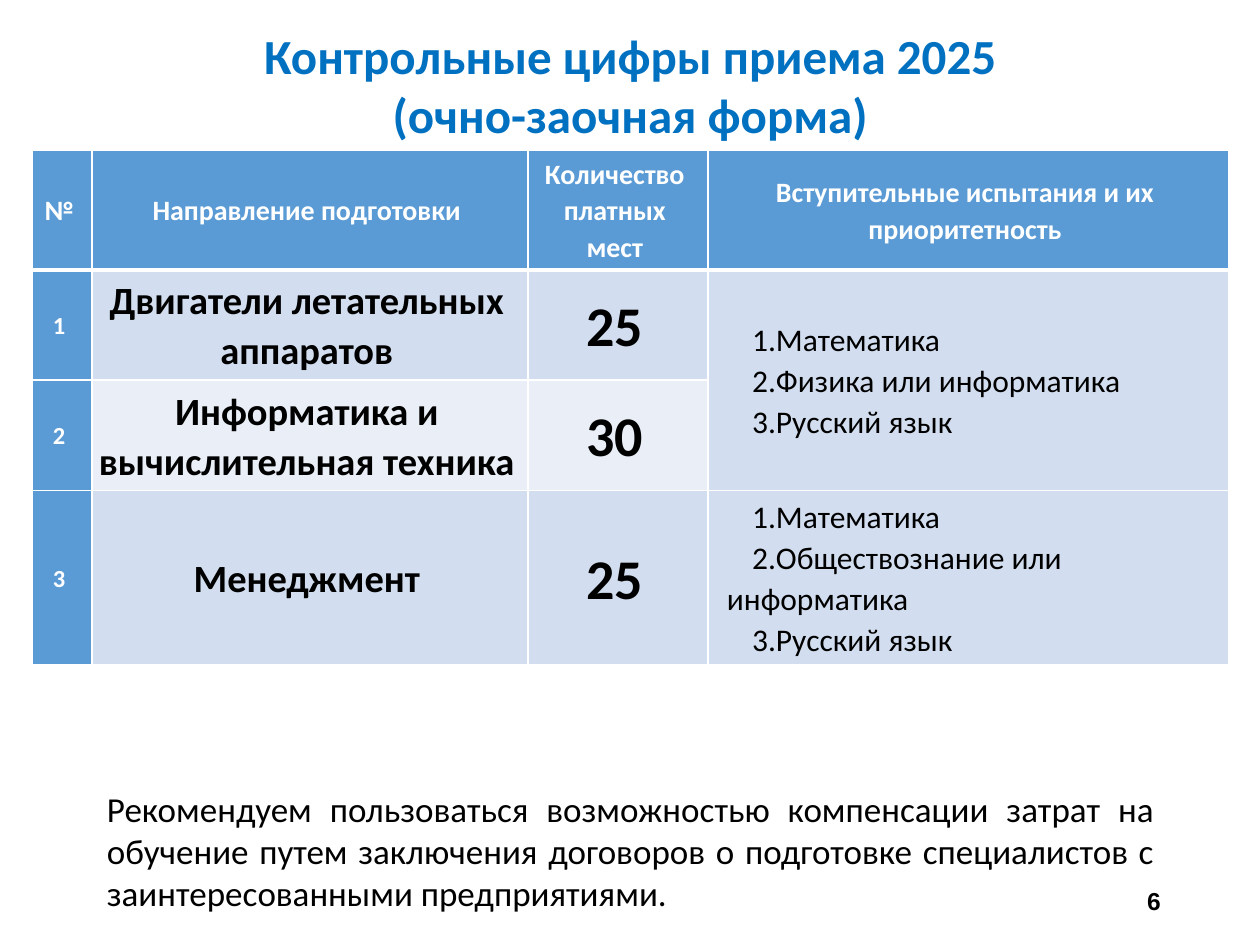
import pptx
import pptx.util
import pptx.dml.color
import pptx.enum.text
import pptx.oxml

Inches, Pt = pptx.util.Inches, pptx.util.Pt
RGBColor = pptx.dml.color.RGBColor
ALIGN = pptx.enum.text.PP_ALIGN
MIDDLE = pptx.enum.text.MSO_ANCHOR.MIDDLE

TITLE_BLUE = RGBColor(0x00, 0x70, 0xC0)
HEADER_BLUE = RGBColor(0x5B, 0x9B, 0xD5)
BAND_DARK = RGBColor(0xD2, 0xDE, 0xEF)
BAND_LIGHT = RGBColor(0xEA, 0xEF, 0xF7)
WHITE = RGBColor(0xFF, 0xFF, 0xFF)
BLACK = RGBColor(0x00, 0x00, 0x00)
NS = 'xmlns:a="http://schemas.openxmlformats.org/drawingml/2006/main"'


def write(frame, lines, size, color, bold, align, font="Calibri", spacing=None, numbered=False):
    frame.word_wrap = True
    frame.text = "\n".join(lines)
    for paragraph in frame.paragraphs:
        paragraph.alignment = align
        if spacing:
            paragraph.line_spacing = spacing
        if numbered:
            properties = paragraph._p.get_or_add_pPr()
            properties.set("marL", str(Inches(0.1)))
            properties.set("indent", str(Inches(0.2)))
            for xml in (f'<a:buAutoNum {NS} type="arabicPeriod"/>',
                        f'<a:tabLst {NS}><a:tab pos="{Inches(2.06)}" algn="l"/></a:tabLst>'):
                properties.append(pptx.oxml.parse_xml(xml))
        paragraph.font.name = font
        paragraph.font.size = Pt(size)
        paragraph.font.bold = bold
        paragraph.font.color.rgb = color


def set_borders(cell, top, bottom):
    widths = {"lnL": 1, "lnR": 1, "lnT": top, "lnB": bottom}
    for place, (side, width) in enumerate(widths.items()):
        cell._tc.get_or_add_tcPr().insert(place, pptx.oxml.parse_xml(
            f'<a:{side} {NS} w="{Pt(width)}"><a:solidFill><a:srgbClr val="{WHITE}"/>'
            f'</a:solidFill></a:{side}>'))


presentation = pptx.Presentation()
presentation.slide_width, presentation.slide_height = Inches(10), Inches(7.5)
slide = presentation.slides.add_slide(presentation.slide_layouts[5])

# Title
title = slide.shapes.title
title.left, title.top = 0, Inches(0.15)
title.width, title.height = presentation.slide_width, Inches(1.04)
write(title.text_frame, ["Контрольные цифры приема 2025", "(очно-заочная форма)"],
      28, TITLE_BLUE, True, ALIGN.CENTER)

# Admission table
engineering_exams = ["Математика", "Физика или информатика", "Русский язык"]
management_exams = ["Математика", "Обществознание или информатика", "Русский язык"]
admissions = [
    (["№"], ["Направление подготовки"], ["Количество платных мест"],
     ["Вступительные испытания и их приоритетность"]),
    (["1"], ["Двигатели летательных аппаратов"], ["25"], engineering_exams),
    (["2"], ["Информатика и вычислительная техника"], ["30"], []),
    (["3"], ["Менеджмент"], ["25"], management_exams),
]
column_widths = [0.47, 3.46, 1.43, 4.13]
row_heights = [0.93, 0.87, 0.87, 1.36]
body_sizes = [14, 22, 32, 18]

table = slide.shapes.add_table(
    len(row_heights), len(column_widths), Inches(0.26), Inches(1.19),
    Inches(sum(column_widths)), Inches(sum(row_heights))).table
for column, width in zip(table.columns, column_widths):
    column.width = Inches(width)
for row, height in zip(table.rows, row_heights):
    row.height = Inches(height)
table.cell(1, 3).merge(table.cell(2, 3))

for r, entries in enumerate(admissions):
    for c, lines in enumerate(entries):
        cell = table.cell(r, c)
        heading = r == 0 or c == 0
        exams = r > 0 and c == 3
        cell.margin_left, cell.margin_right = Inches(0.05), Inches(0.1)
        cell.margin_top = cell.margin_bottom = Inches(0.04)
        cell.vertical_anchor = MIDDLE
        cell.fill.solid()
        cell.fill.fore_color.rgb = HEADER_BLUE if heading else BAND_DARK if r % 2 else BAND_LIGHT
        set_borders(cell, top=3 if r == 1 else 1, bottom=3 if r == 0 else 1)
        if lines:
            write(cell.text_frame, lines, 16 if r == 0 else body_sizes[c],
                  WHITE if heading else BLACK, not exams,
                  ALIGN.LEFT if exams else ALIGN.CENTER, spacing=1.07, numbered=exams)

# Page number
page_number = slide.shapes.add_textbox(Inches(7.06), Inches(6.95), Inches(2.25), Inches(0.4))
page_number.text_frame.vertical_anchor = MIDDLE
write(page_number.text_frame, ["6"], 14, BLACK, True, ALIGN.RIGHT, font="Arial")

# Recommendation
advice = slide.shapes.add_textbox(Inches(0.75), Inches(6.2), Inches(8.51), Inches(1.11))
write(advice.text_frame,
      ["Рекомендуем пользоваться возможностью компенсации затрат на обучение путем "
       "заключения договоров о подготовке специалистов с заинтересованными предприятиями."],
      20, BLACK, False, ALIGN.JUSTIFY)

presentation.save("out.pptx")
